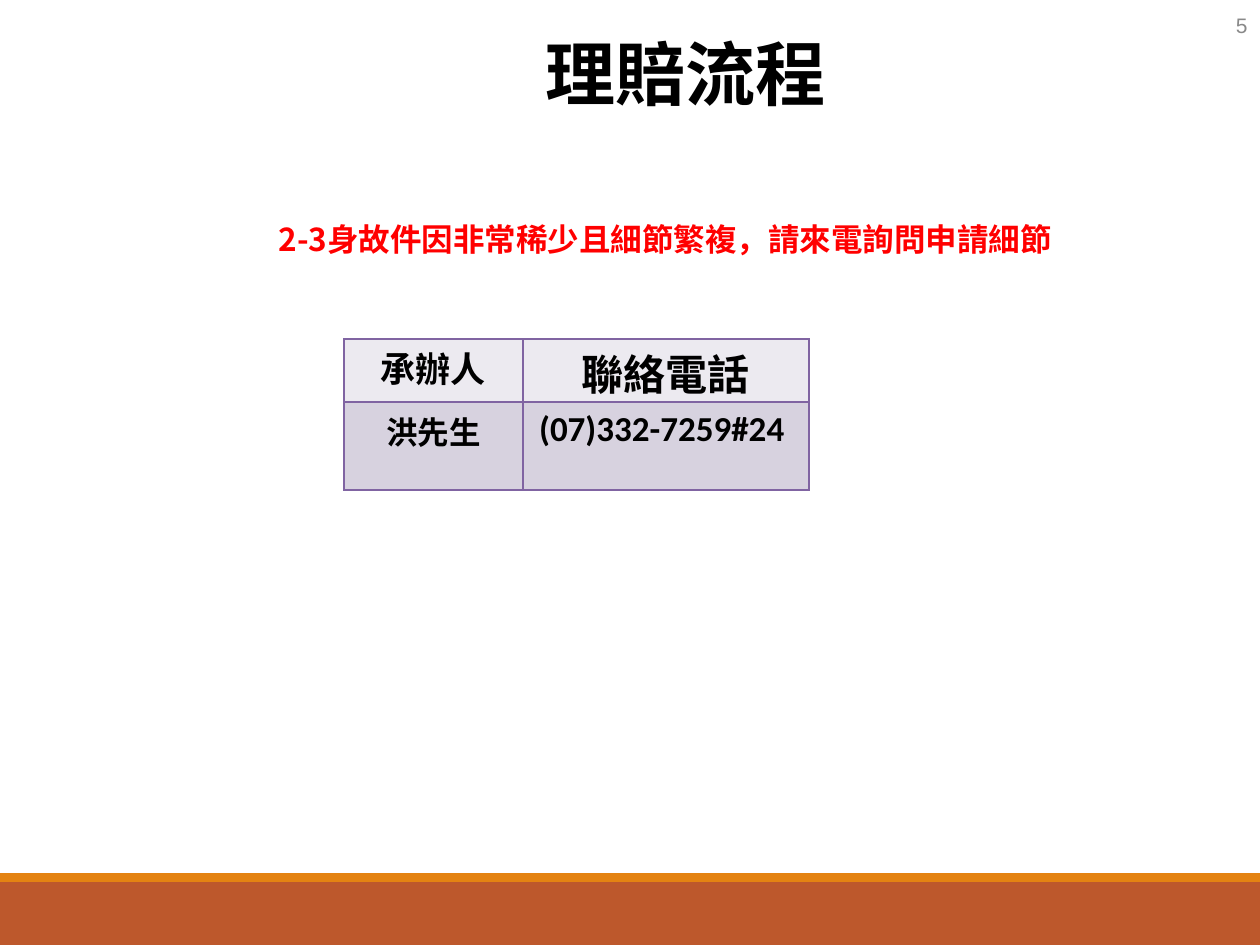
from lxml import etree
from pptx import Presentation
from pptx.dml.color import RGBColor
from pptx.enum.shapes import MSO_SHAPE
from pptx.enum.text import MSO_ANCHOR, MSO_AUTO_SIZE, PP_ALIGN
from pptx.oxml.ns import qn
from pptx.util import Inches, Pt

RECT = MSO_SHAPE.RECTANGLE
TOP, MIDDLE = MSO_ANCHOR.TOP, MSO_ANCHOR.MIDDLE
CENTER, RIGHT = PP_ALIGN.CENTER, PP_ALIGN.RIGHT
FIT = MSO_AUTO_SIZE.SHAPE_TO_FIT_TEXT
TITLE_ONLY = 5
CJK = "Noto Sans CJK SC"


def rgb(value):
    return RGBColor.from_string(value)


def write(tf, text, size=18, font=CJK, color="000000", bold=True, align=CENTER):
    p = tf.paragraphs[0]
    p.alignment = align
    r = p.add_run()
    r.text = text
    r.font.size, r.font.bold, r.font.name = Pt(size), bold, font
    r.font.color.rgb = rgb(color)
    ea = etree.SubElement(r.font._element, qn("a:ea"))
    ea.set("typeface", CJK)
    r.font._element.find(qn("a:latin")).addnext(ea)


class SlideBuilder:
    border = "8064A2"
    border_width = 0.96
    row_fills = ("ECEAF0", "D7D2DF")

    def __init__(self, prs):
        self.s = prs.slides.add_slide(prs.slide_layouts[TITLE_ONLY])

    def bar(self, top, height, color):
        sp = self.s.shapes.add_shape(RECT, 0, Inches(top), Inches(10), Inches(height))
        sp.shadow.inherit = False
        sp.fill.solid()
        sp.fill.fore_color.rgb = rgb(color)
        sp.line.fill.background()

    def title(self, text, left, top, width, height, **style):
        sp = self.s.shapes.title
        sp.left, sp.top = Inches(left), Inches(top)
        sp.width, sp.height = Inches(width), Inches(height)
        tf = sp.text_frame
        tf.word_wrap, tf.auto_size, tf.vertical_anchor = False, FIT, TOP
        write(tf, text, **style)

    def text(self, text, left, top, width, height, anchor=TOP, **style):
        sp = self.s.shapes.add_textbox(
            Inches(left), Inches(top), Inches(width), Inches(height))
        tf = sp.text_frame
        tf.word_wrap, tf.vertical_anchor = True, anchor
        write(tf, text, **style)

    def cell_borders(self, cell):
        tcPr = cell._tc.get_or_add_tcPr()
        for i, side in enumerate(("lnL", "lnR", "lnT", "lnB")):
            ln = etree.Element(qn(f"a:{side}"), w=str(Pt(self.border_width)))
            fill = etree.SubElement(ln, qn("a:solidFill"))
            etree.SubElement(fill, qn("a:srgbClr"), val=self.border)
            tcPr.insert(i, ln)

    def table(self, rows, left, top, widths, heights):
        table = self.s.shapes.add_table(
            len(rows), len(widths), Inches(left), Inches(top),
            Inches(sum(widths)), Inches(sum(heights))).table
        table.first_row = table.horz_banding = False
        for column, width in zip(table.columns, widths):
            column.width = Inches(width)
        for i, (row, height, fill) in enumerate(zip(rows, heights, self.row_fills)):
            table.rows[i].height = Inches(height)
            for j, (text, style) in enumerate(row):
                cell = table.cell(i, j)
                cell.margin_top, cell.margin_bottom = Inches(0.02 if i == 0 else 0.05), 0
                cell.fill.solid()
                cell.fill.fore_color.rgb = rgb(fill)
                self.cell_borders(cell)
                write(cell.text_frame, text, **style)


def main():
    prs = Presentation()
    prs.slide_width, prs.slide_height = Inches(10), Inches(7.5)
    slide = SlideBuilder(prs)
    slide.bar(7, 0.5, "BD582C")
    slide.bar(6.93, 0.07, "E48312")
    slide.title("理賠流程", 4.23, 0.19, 2.42, 0.77, size=40)
    slide.text("2-3身故件因非常稀少且細節繁複，請來電詢問申請細節",
               2.01, 1.7, 6.54, 0.4, color="FF0000")
    contacts = [
        [("承辦人", {"size": 20}), ("聯絡電話", {"size": 24})],
        [("洪先生", {"size": 18, "font": "Calibri"}),
         ("(07)332-7259#24 ", {"size": 20, "font": "Calibri"})],
    ]
    slide.table(contacts, 2.73, 2.69, widths=(1.42, 2.27), heights=(0.5, 0.7))
    slide.text("5", 8.92, 0, 1.08, 0.4, anchor=MIDDLE, size=12, font="Arial",
               color="898989", bold=False, align=RIGHT)
    prs.save("out.pptx")


if __name__ == "__main__":
    main()
